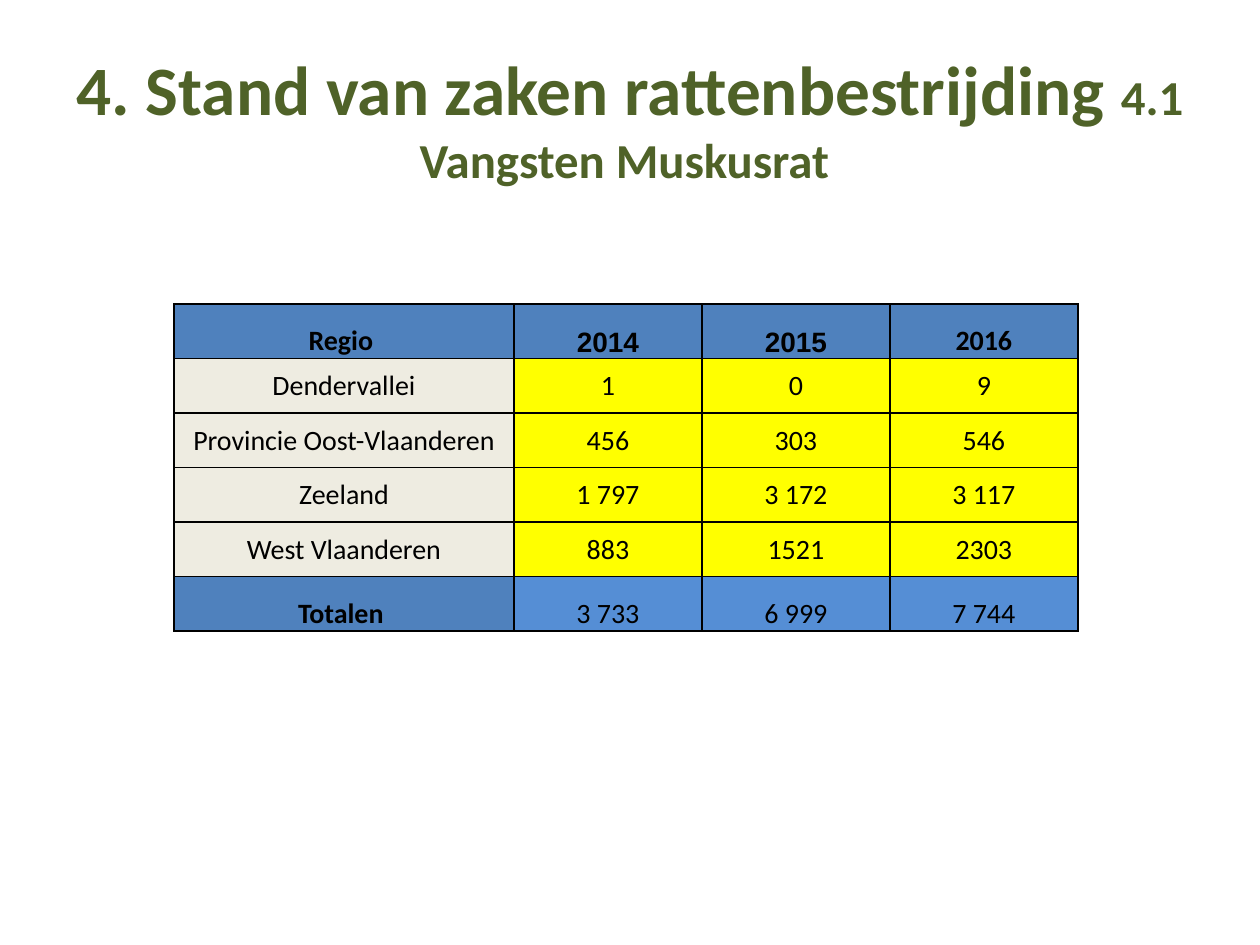
from lxml import etree
from pptx import Presentation
from pptx.dml.color import RGBColor
from pptx.enum.text import MSO_ANCHOR, PP_ALIGN
from pptx.oxml.ns import qn
from pptx.util import Pt

PX = 914400 / 126
CENTER = PP_ALIGN.CENTER
MIDDLE, BOTTOM = MSO_ANCHOR.MIDDLE, MSO_ANCHOR.BOTTOM
COLORS = {
    "title": "4F6228",
    "text": "000000",
    "header": "4F81BD",
    "region": "EEECE1",
    "catch": "FFFF00",
    "total": "558ED5",
}
TITLE_RUNS = [
    ("4. Stand van zaken rattenbestrijding ", 39.6),
    ("4.1 Vangsten Muskusrat ", 27.9),
]
CATCHES = [
    ["Regio ", "2014", "2015", "2016"],
    ["Dendervallei", "1", "0", "9"],
    ["Provincie Oost-Vlaanderen", "456", "303", "546"],
    ["Zeeland", "1 797", "3 172", "3 117"],
    ["West Vlaanderen", "883", "1521", "2303"],
    ["Totalen ", "3 733", "6 999", "7 744"],
]
COLUMN_WIDTHS = [340, 188, 188, 188]


def px(value):
    return round(value * PX)


def color(name):
    return RGBColor.from_string(COLORS[name])


def set_attributes(target, values):
    for name, value in values.items():
        setattr(target, name, value)


def add_run(p, text, size, fill, bold, font="Calibri"):
    r = p.add_run()
    r.text = text
    set_attributes(r.font, {"name": font, "size": Pt(size), "bold": bold})
    r.font.color.rgb = color(fill)


def add_title(slide, x, y, w, h):
    tf = slide.shapes.add_textbox(px(x), px(y), px(w), px(h)).text_frame
    set_attributes(tf, {"word_wrap": True, "vertical_anchor": MIDDLE})
    p = tf.paragraphs[0]
    p.alignment = CENTER
    for text, size in TITLE_RUNS:
        add_run(p, text, size, "title", True)


def add_borders(cell):
    tc_pr = cell._tc.get_or_add_tcPr()
    for index, side in enumerate(("a:lnL", "a:lnR", "a:lnT", "a:lnB")):
        ln = etree.Element(qn(side), w=str(Pt(1)))
        fill = etree.SubElement(ln, qn("a:solidFill"))
        etree.SubElement(fill, qn("a:srgbClr"), val=COLORS["text"])
        tc_pr.insert(index, ln)


def cell_style(row, col):
    last = len(CATCHES) - 1
    if row == 0:
        return "header", BOTTOM, True, "Arial" if col in (1, 2) else "Calibri"
    if row == last:
        return "total" if col else "header", BOTTOM, col == 0, "Calibri"
    return "catch" if col else "region", MIDDLE, False, "Calibri"


def add_catch_table(slide, x, y, w, h):
    frame = slide.shapes.add_table(
        len(CATCHES), len(COLUMN_WIDTHS), px(x), px(y), px(w), px(h))
    table = frame.table
    for column, width in zip(table.columns, COLUMN_WIDTHS):
        column.width = px(width * w / sum(COLUMN_WIDTHS))
    for row, values in enumerate(CATCHES):
        table.rows[row].height = px(h / len(CATCHES))
        for col, text in enumerate(values):
            fill, anchor, bold, font = cell_style(row, col)
            cell = table.cell(row, col)
            set_attributes(cell, {
                "vertical_anchor": anchor,
                "margin_left": px(1),
                "margin_right": px(1),
                "margin_top": px(1),
                "margin_bottom": 0,
            })
            cell.fill.solid()
            cell.fill.fore_color.rgb = color(fill)
            add_borders(cell)
            p = cell.text_frame.paragraphs[0]
            p.alignment = CENTER
            add_run(p, text, 16, "text", bold, font)


def main():
    prs = Presentation()
    set_attributes(prs, {"slide_width": px(1260), "slide_height": px(945)})
    slide = prs.slides.add_slide(prs.slide_layouts[6])
    add_title(slide, 63, 38, 1134, 158)
    add_catch_table(slide, 174, 304, 904, 327)
    prs.save("out.pptx")


if __name__ == "__main__":
    main()
